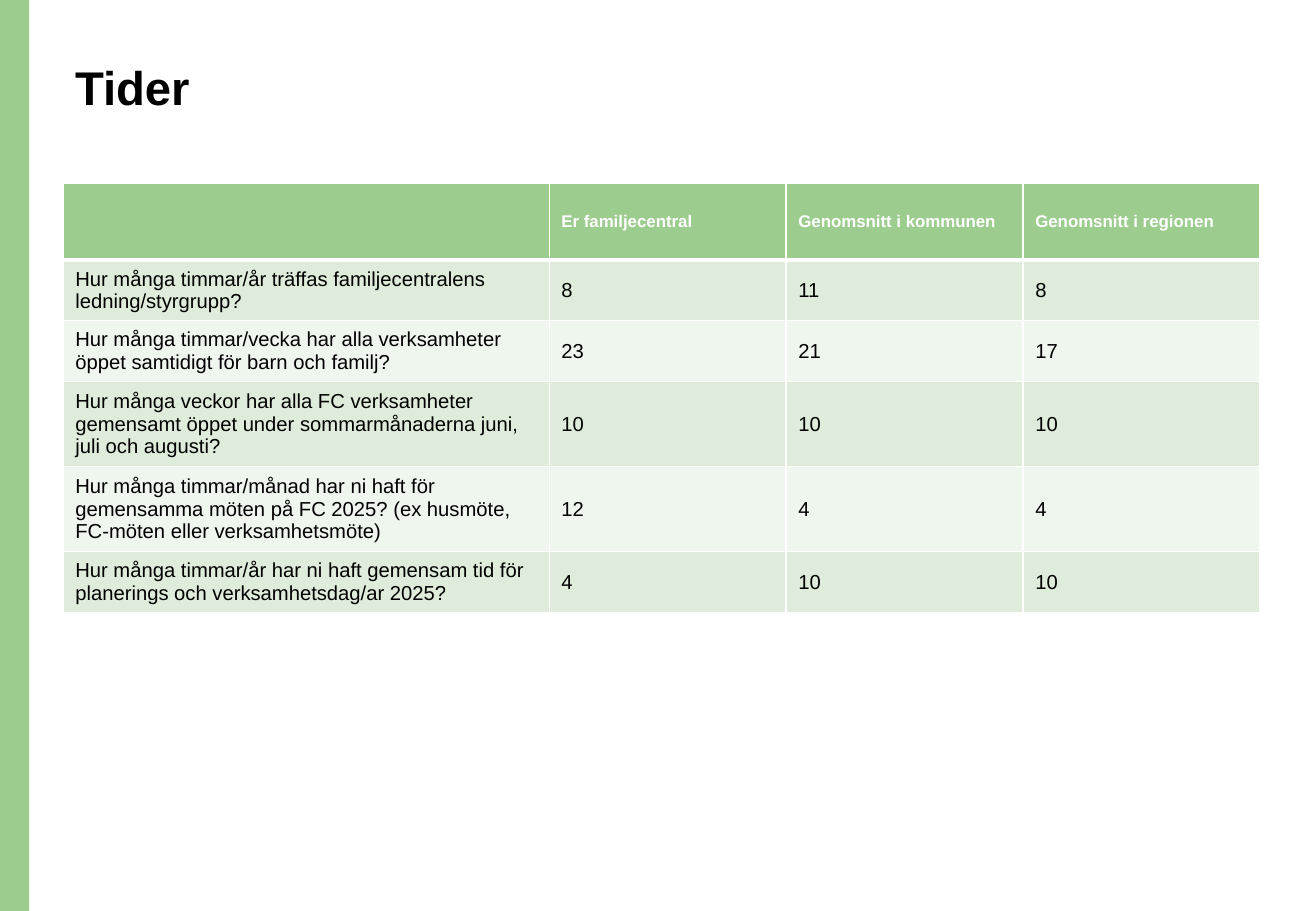
"""Build the slide "Tider", a table of hours compared with municipality and region."""
from dataclasses import dataclass

import lxml.etree
import pptx
import pptx.dml.color
import pptx.enum.shapes
import pptx.enum.text
import pptx.oxml.ns
import pptx.slide
import pptx.table
import pptx.text.text
import pptx.util
from pptx.util import Inches

COLORS = {
    "green": "9DCC8F",
    "dark band": "DFECDB",
    "light band": "EFF6EE",
    "white": "FFFFFF",
    "black": "000000",
}
FONT = "Arial"
COLUMN_WIDTHS = (4, 1.95, 1.95, 1.95)
HEADER_HEIGHT = 0.63
THIN_BORDER, THICK_BORDER = 1, 3


@dataclass(frozen=True)
class TableRow:
    texts: tuple[str, ...]
    height: float


@dataclass(frozen=True)
class CellStyle:
    fill: str
    font_color: str
    size: int
    bold: bool
    top: int = THIN_BORDER
    bottom: int = THIN_BORDER


HEADER = TableRow(
    ("", "Er familjecentral", "Genomsnitt i kommunen", "Genomsnitt i regionen"),
    HEADER_HEIGHT,
)
QUESTIONS = (
    TableRow(("Hur många timmar/år träffas familjecentralens ledning/styrgrupp?",
              "8", "11", "8"), 0.47),
    TableRow(("Hur många timmar/vecka har alla verksamheter öppet samtidigt för barn och familj?",
              "23", "21", "17"), 0.47),
    TableRow(("Hur många veckor har alla FC verksamheter gemensamt öppet under "
              "sommarmånaderna juni, juli och augusti?", "10", "10", "10"), 0.66),
    TableRow(("Hur många timmar/månad har ni haft för gemensamma möten på FC 2025? "
              "(ex husmöte, FC-möten eller verksamhetsmöte)", "12", "4", "4"), 0.66),
    TableRow(("Hur många timmar/år har ni haft gemensam tid för planerings och "
              "verksamhetsdag/ar 2025?", "4", "10", "10"), 0.47),
)


def color(name: str) -> pptx.dml.color.RGBColor:
    return pptx.dml.color.RGBColor.from_string(COLORS[name])


def set_font(paragraph: pptx.text.text._Paragraph, size: int, font_color: str, bold: bool) -> None:
    font = paragraph.font
    font.name = FONT
    font.size = pptx.util.Pt(size)
    font.bold = bold
    font.color.rgb = color(font_color)


def add_side_bar(slide: pptx.slide.Slide) -> None:
    bar = slide.shapes.add_shape(
        pptx.enum.shapes.MSO_SHAPE.RECTANGLE, 0, 0, Inches(0.24), Inches(7.5))
    bar.shadow.inherit = False
    bar.fill.solid()
    bar.fill.fore_color.rgb = color("green")
    bar.line.fill.background()


def add_title(slide: pptx.slide.Slide) -> None:
    title = slide.shapes.add_textbox(Inches(0.52), Inches(0.48), Inches(9.34), Inches(1.02))
    title.text_frame.word_wrap = True
    paragraph = title.text_frame.paragraphs[0]
    paragraph.text = "Tider"
    paragraph.line_spacing = 0.9
    set_font(paragraph, 28, "black", True)


def set_borders(cell: pptx.table._Cell, top: int, bottom: int) -> None:
    properties = cell._tc.get_or_add_tcPr()
    widths = {"a:lnL": THIN_BORDER, "a:lnR": THIN_BORDER, "a:lnT": top, "a:lnB": bottom}
    for index, (side, width) in enumerate(widths.items()):
        line = lxml.etree.Element(pptx.oxml.ns.qn(side), w=str(pptx.util.Pt(width)))
        fill = lxml.etree.SubElement(line, pptx.oxml.ns.qn("a:solidFill"))
        lxml.etree.SubElement(fill, pptx.oxml.ns.qn("a:srgbClr"), val=COLORS["white"])
        properties.insert(index, line)


def fill_cell(cell: pptx.table._Cell, text: str, style: CellStyle) -> None:
    cell.vertical_anchor = pptx.enum.text.MSO_ANCHOR.MIDDLE
    cell.fill.solid()
    cell.fill.fore_color.rgb = color(style.fill)
    set_borders(cell, style.top, style.bottom)
    paragraph = cell.text_frame.paragraphs[0]
    paragraph.text = text
    set_font(paragraph, style.size, style.font_color, style.bold)


def row_style(row_index: int) -> CellStyle:
    if row_index == 0:
        return CellStyle("green", "white", 10, True, bottom=THICK_BORDER)
    band = "dark band" if row_index % 2 else "light band"
    top = THICK_BORDER if row_index == 1 else THIN_BORDER
    return CellStyle(band, "black", 12, False, top=top)


def add_hours_table(slide: pptx.slide.Slide) -> None:
    rows = (HEADER, *QUESTIONS)
    table = slide.shapes.add_table(
        len(rows), len(COLUMN_WIDTHS), Inches(0.52), Inches(1.51),
        Inches(sum(COLUMN_WIDTHS)), Inches(sum(row.height for row in rows))).table
    for column, width in zip(table.columns, COLUMN_WIDTHS):
        column.width = Inches(width)
    for row_index, row in enumerate(rows):
        table.rows[row_index].height = Inches(row.height)
        for column_index, text in enumerate(row.texts):
            fill_cell(table.cell(row_index, column_index), text, row_style(row_index))


def main() -> None:
    presentation = pptx.Presentation()
    presentation.slide_width = Inches(10.83)
    presentation.slide_height = Inches(7.5)
    slide = presentation.slides.add_slide(presentation.slide_layouts[6])
    add_side_bar(slide)
    add_title(slide)
    add_hours_table(slide)
    presentation.save("out.pptx")


if __name__ == "__main__":
    main()
